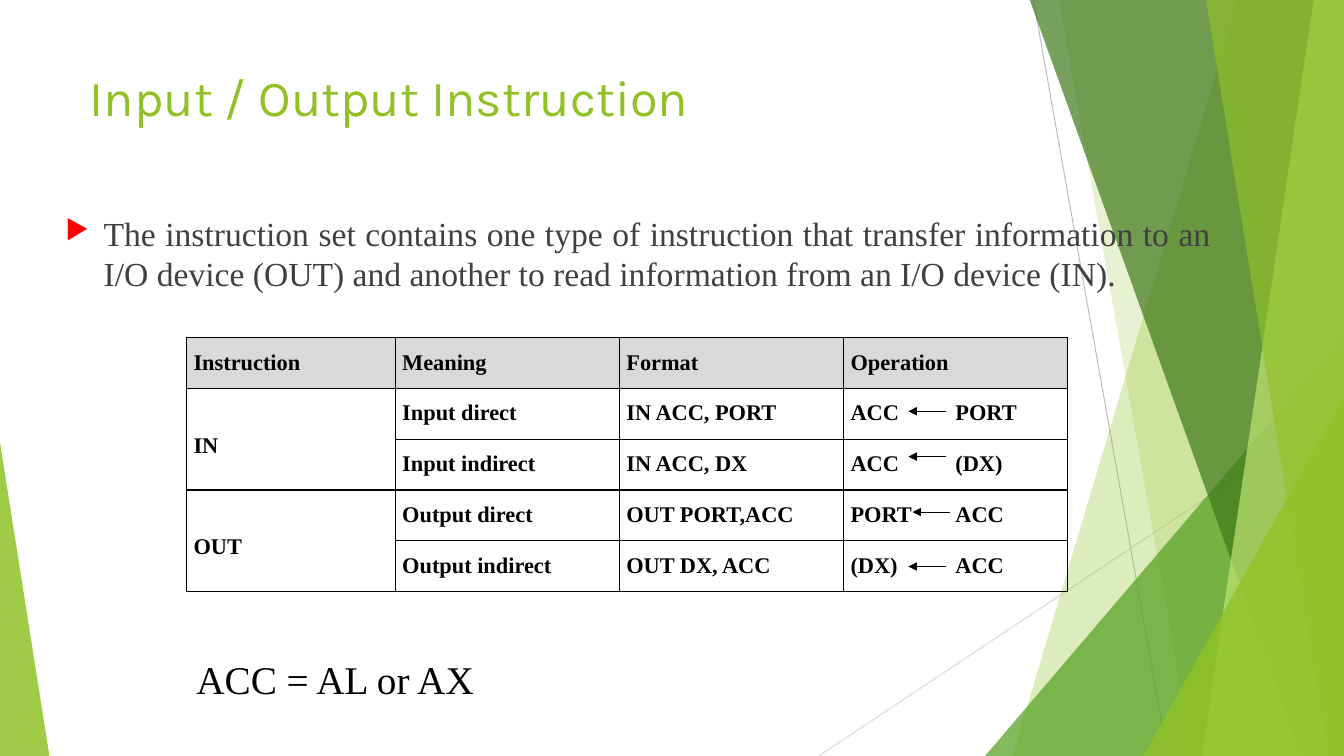
import dataclasses
from typing import Optional

import lxml.etree
import pptx
import pptx.dml.color
import pptx.enum.shapes
import pptx.enum.text
import pptx.oxml.ns
import pptx.util

PX = 9144  # EMU: one hundred px to the inch
RIGHT, TOP, BOTTOM = 1333, -1, 750
SERIF = "Times New Roman"
BLACK, LIME = "000000", "90C226"
ALIGN = pptx.enum.text.PP_ALIGN
ANCHOR = pptx.enum.text.MSO_ANCHOR


@dataclasses.dataclass(frozen=True)
class Line:
    start: tuple[int, int]
    end: tuple[int, int]
    color: str = BLACK
    arrow: bool = False


@dataclasses.dataclass(frozen=True)
class Facet:
    """A sloped panel that reaches the right edge of the slide."""
    top_left: int
    bottom_left: int
    color: str
    alpha: int


@dataclasses.dataclass(frozen=True)
class Triangle:
    left: int
    top: int
    width: int
    apex: int
    color: str
    alpha: int


@dataclasses.dataclass(frozen=True)
class TextStyle:
    size: int
    color: str = BLACK
    font: str = SERIF
    bold: bool = False


BACKDROP = [
    Line((1025, 0), (1158, 750), "BFBFBF"),
    Line((1333, 403), (812, 750), "D9D9D9"),
    Facet(1228, 1004, LIME, 30),
    Facet(1050, 1183, LIME, 20),
    Triangle(977, 333, 356, 1, "54A021", 72),
    Facet(1021, 1291, "3F7819", 70),
    Facet(1303, 1192, "C0E474", 70),
    Facet(1196, 1318, LIME, 65),
    Triangle(1134, 393, 199, 1, LIME, 80),
    Triangle(0, 439, 49, 0, LIME, 85),
]
ARROWS = [Line((x, y), (x + 37, y), arrow=True)
          for x, y in [(905, 508), (901, 562), (901, 453), (901, 408)]]
ROWS = [
    ["Instruction", "Meaning", "Format", "Operation"],
    ["IN", "Input direct", "IN ACC, PORT", "ACC\tPORT"],
    ["", "Input indirect", "IN ACC, DX", "ACC\t(DX)"],
    ["OUT", "Output direct", "OUT PORT,ACC", "PORT\tACC"],
    ["", "Output indirect", "OUT DX, ACC", "(DX)\tACC"],
]


def rgb(color: str) -> pptx.dml.color.RGBColor:
    return pptx.dml.color.RGBColor.from_string(color)


def add_element(parent, tag: str, **attributes):
    element = lxml.etree.SubElement(parent, pptx.oxml.ns.qn(tag))
    for name, value in attributes.items():
        element.set(name, str(value))
    return element


def draw_line(page, line: Line) -> None:
    connector = page.shapes.add_connector(
        pptx.enum.shapes.MSO_CONNECTOR.STRAIGHT,
        *(value * PX for value in line.start + line.end))
    connector.line.color.rgb = rgb(line.color)
    connector.line.width = pptx.util.Pt(0.75)
    if line.arrow:
        add_element(connector.line._get_or_add_ln(), "a:headEnd", type="triangle")
    add_element(connector._element.spPr, "a:effectLst")


def paint(shape, color: str, alpha: int) -> None:
    """Fill without outline or shadow; alpha is the opacity in percent."""
    shape.shadow.inherit = False
    shape.line.fill.background()
    shape.fill.solid()
    shape.fill.fore_color.rgb = rgb(color)
    tint = shape._element.spPr.find(".//" + pptx.oxml.ns.qn("a:srgbClr"))
    add_element(tint, "a:alpha", val=alpha * 1000)


def draw_facet(page, facet: Facet) -> None:
    builder = page.shapes.build_freeform(facet.top_left, TOP, scale=PX)
    builder.add_line_segments(
        [(RIGHT, TOP), (RIGHT, BOTTOM), (facet.bottom_left, BOTTOM)], close=True)
    paint(builder.convert_to_shape(), facet.color, facet.alpha)


def draw_triangle(page, triangle: Triangle) -> None:
    shape = page.shapes.add_shape(
        pptx.enum.shapes.MSO_SHAPE.ISOSCELES_TRIANGLE,
        triangle.left * PX, triangle.top * PX,
        triangle.width * PX, (BOTTOM - triangle.top) * PX)
    shape.adjustments[0] = triangle.apex
    paint(shape, triangle.color, triangle.alpha)


def add_text(para, text: str, style: TextStyle) -> None:
    span = para.add_run()
    span.text = text
    span.font.size = pptx.util.Pt(style.size)
    span.font.name = style.font
    span.font.bold = style.bold
    span.font.color.rgb = rgb(style.color)


def draw_text(page, bounds: tuple[int, int, int, int], text: str, style: TextStyle,
              align=ALIGN.JUSTIFY, anchor=ANCHOR.TOP, bullet: Optional[str] = None) -> None:
    box = page.shapes.add_textbox(*(value * PX for value in bounds))
    box.text_frame.word_wrap = True
    box.text_frame.vertical_anchor = anchor
    para = box.text_frame.paragraphs[0]
    para.alignment = align
    if bullet:
        properties = para._p.get_or_add_pPr()
        properties.set("marL", str(38 * PX))
        properties.set("indent", str(-38 * PX))
        add_element(add_element(properties, "a:buClr"), "a:srgbClr", val="FF0000")
        add_element(properties, "a:buSzPct", val=80000)
        add_element(properties, "a:buChar", char=bullet)
    add_text(para, text, style)


def fill_cell(cell, text: str, header: bool) -> None:
    cell.margin_left = cell.margin_right = 7 * PX
    cell.margin_top = cell.margin_bottom = 0
    properties = cell._tc.get_or_add_tcPr()
    for side in ("a:lnL", "a:lnR", "a:lnT", "a:lnB"):
        border = add_element(properties, side, w=pptx.util.Pt(1))
        add_element(add_element(border, "a:solidFill"), "a:srgbClr", val=BLACK)
    if header:
        cell.fill.solid()
        cell.fill.fore_color.rgb = rgb("D9D9D9")
    else:
        cell.fill.background()
    if not text:
        return
    para = cell.text_frame.paragraphs[0]
    para.alignment = ALIGN.JUSTIFY
    para.line_spacing = 1.5
    if "\t" in text:
        stops = add_element(para._p.get_or_add_pPr(), "a:tabLst")
        add_element(stops, "a:tab", pos=104 * PX, algn="l")
    add_text(para, text, TextStyle(16, bold=True))


def draw_table(page) -> None:
    width, first_width = 874, 207
    table = page.shapes.add_table(
        len(ROWS), len(ROWS[0]), 185 * PX, 335 * PX, width * PX, 252 * PX).table
    table.horz_banding = False
    for index, column in enumerate(table.columns):
        column.width = (width - first_width) * PX // 3 if index else first_width * PX
    for row, texts in enumerate(ROWS):
        for column, text in enumerate(texts):
            fill_cell(table.cell(row, column), text, header=row == 0)
    for row in (1, 3):
        table.cell(row, 0).merge(table.cell(row + 1, 0))
        table.cell(row, 0).vertical_anchor = ANCHOR.MIDDLE


def main() -> None:
    deck = pptx.Presentation()
    deck.slide_width, deck.slide_height = RIGHT * PX, BOTTOM * PX
    page = deck.slides.add_slide(deck.slide_layouts[6])
    painters = {Line: draw_line, Facet: draw_facet, Triangle: draw_triangle}
    for part in BACKDROP:
        painters[type(part)](page, part)
    draw_text(page, (79, 61, 1107, 134), "Input / Output Instruction",
              TextStyle(36, LIME, "Karla"), align=ALIGN.LEFT)
    draw_text(page, (55, 206, 1156, 91),
              "The instruction set contains one type of instruction that transfer "
              "information to an I/O device (OUT) and another to read information "
              "from an I/O device (IN).", TextStyle(24, "404040"), bullet="▶")
    draw_table(page)
    for arrow in ARROWS:
        draw_line(page, arrow)
    draw_text(page, (185, 586, 351, 116), "ACC = AL or AX", TextStyle(28),
              anchor=ANCHOR.BOTTOM)
    deck.save("out.pptx")


if __name__ == "__main__":
    main()
